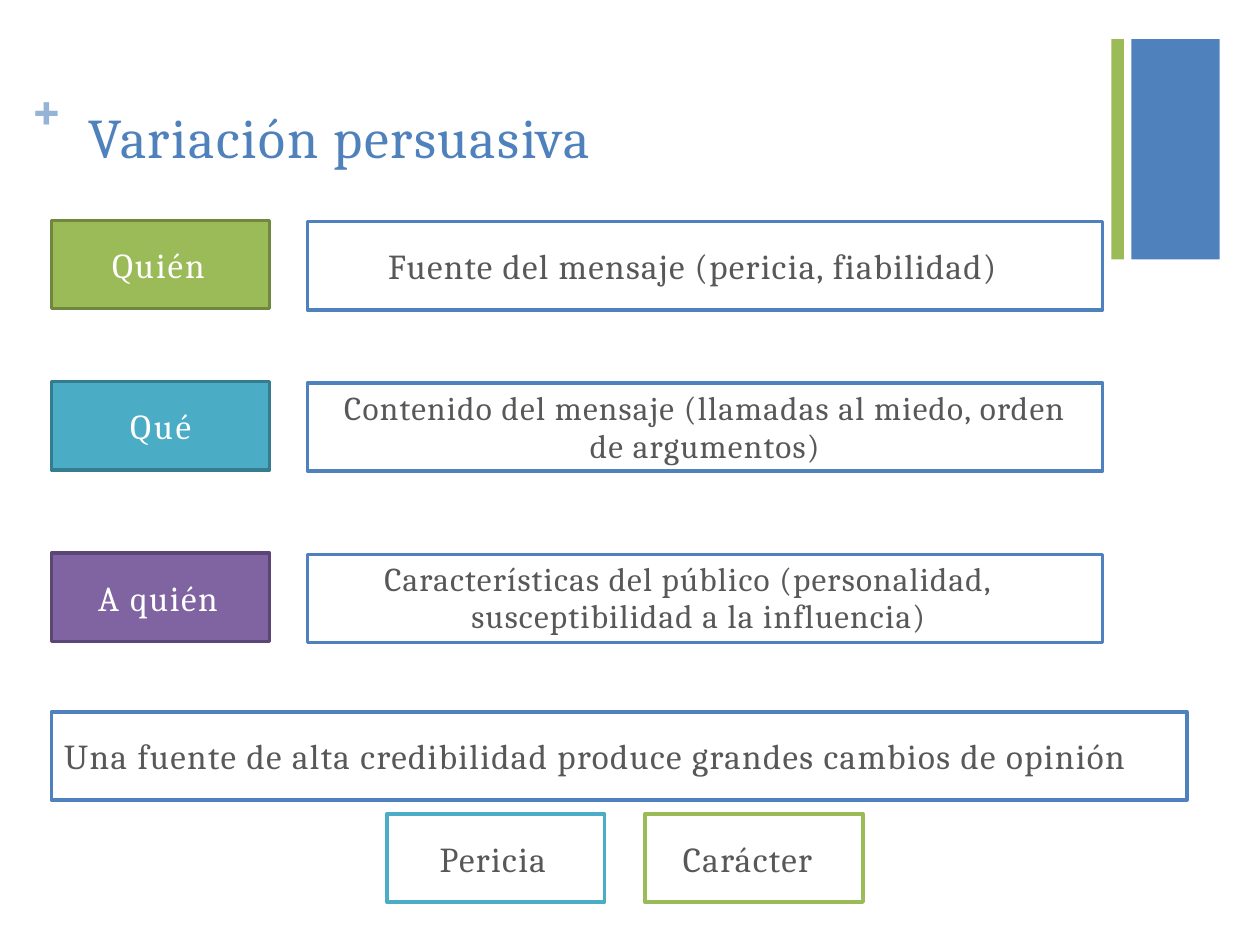
from pptx import Presentation
from pptx.dml.color import RGBColor
from pptx.enum.shapes import MSO_SHAPE
from pptx.enum.text import MSO_ANCHOR, MSO_AUTO_SIZE, PP_ALIGN
from pptx.util import Inches, Pt

RECT = MSO_SHAPE.RECTANGLE
TOP, MIDDLE = MSO_ANCHOR.TOP, MSO_ANCHOR.MIDDLE
LEFT, CENTER = PP_ALIGN.LEFT, PP_ALIGN.CENTER
FIT = MSO_AUTO_SIZE.NONE

FONT = "Cambria"
BLUE, GREEN, TEAL, VIOLET = "4F81BC", "9BBA58", "4AACC5", "8063A1"
PALE, GRAY, WHITE = "94B3D6", "585858", "FFFFFF"

TAG_X, TAG_W = 0.41, 1.73
NOTE_X, NOTE_W = 2.44, 6.31
BOX_H = 0.7

# top, tag, fill, line, tag indent, tag spacing, note, note style
ROWS = [
    (1.75, "Quién", GREEN, "70883E", 0.48, 1.1,
     "Fuente del mensaje (pericia, fiabilidad)",
     dict(indent=0.64, gap=0.75)),
    (3.03, "Qué", TEAL, "357C91", None, 1.6,
     "Contenido del mensaje (llamadas al miedo, orden\nde argumentos)",
     dict(size=19, gap=0.75, lead=21.8)),
    (4.39, "A quién", VIOLET, "5C4676", 0.37, 0.9,
     "Características del público (personalidad, "
     "susceptibilidad a la influencia)",
     dict(size=19, indent=1.3, first=-0.69, gap=0.7, lead=20.7)),
]


def color(code):
    return RGBColor.from_string(code)


def style(run, size, ink, gap, bold=False):
    font = run.font
    font.name, font.size, font.bold = FONT, Pt(size), bold
    font.color.rgb = color(ink)
    font._element.set("spc", str(round(gap * 100)))


def set_frame(frame, anchor):
    frame.word_wrap = True
    frame.auto_size = FIT
    frame.vertical_anchor = anchor
    frame.margin_left = frame.margin_right = 0
    frame.margin_top = frame.margin_bottom = 0


def set_indent(para, left, first=0):
    props = para._p.get_or_add_pPr()
    props.set("marL", str(Inches(left)))
    props.set("indent", str(Inches(first)))


def add_rect(slide, x, y, w, h, fill=None, line=None):
    box = slide.shapes.add_shape(RECT, Inches(x), Inches(y), Inches(w), Inches(h))
    box.shadow.inherit = False
    if fill:
        box.fill.solid()
        box.fill.fore_color.rgb = color(fill)
    else:
        box.fill.background()
    if line:
        box.line.color.rgb = color(line)
        box.line.width = Pt(2)
    else:
        box.line.fill.background()
    return box


def add_label(box, text, ink=GRAY, size=20, indent=None, first=0, gap=0.8, lead=None):
    """Write text in a box: centred, or left-aligned at an indent."""
    frame = box.text_frame
    set_frame(frame, MIDDLE)
    frame.text = text
    for para in frame.paragraphs:
        para.alignment = CENTER if indent is None else LEFT
        if indent is not None:
            set_indent(para, indent, first)
        if lead:
            para.line_spacing = Pt(lead)
        for run in para.runs:
            style(run, size, ink, gap)


def add_title(slide):
    title = slide.shapes.title
    title.left, title.top = Inches(0.2), Inches(0.5)
    title.width, title.height = Inches(4.72), Inches(0.63)
    frame = title.text_frame
    set_frame(frame, TOP)
    frame.margin_top = Inches(0.01)
    para = frame.paragraphs[0]
    para.alignment = LEFT
    set_indent(para, 0.04)
    plus, name = para.add_run(), para.add_run()
    plus.text, name.text = "+ ", "Variación persuasiva"
    style(plus, 54, PALE, 4, bold=True)
    plus.font._element.set("baseline", "31000")
    style(name, 32, BLUE, 0.89)


def main():
    prs = Presentation()
    prs.slide_width, prs.slide_height = Inches(10), Inches(7.5)
    slide = prs.slides.add_slide(prs.slide_layouts[5])

    # Corner bars and title
    add_rect(slide, 8.98, 0.31, 0.7, 1.75, BLUE)
    add_title(slide)
    add_rect(slide, 8.82, 0.31, 0.1, 1.75, GREEN)

    # Question tags with their notes
    for y, tag, fill, line, indent, gap, note, look in ROWS:
        box = add_rect(slide, TAG_X, y, TAG_W, BOX_H, fill, line)
        add_label(box, tag, WHITE, indent=indent, gap=gap)
        box = add_rect(slide, NOTE_X, y + 0.01, NOTE_W, BOX_H, line=BLUE)
        add_label(box, note, **look)

    # Conclusion and its two factors
    box = add_rect(slide, TAG_X, 5.65, 9.01, BOX_H, line=BLUE)
    add_label(box, "Una fuente de alta credibilidad produce grandes cambios de opinión",
              indent=0.1)
    for x, text, line, indent in [(3.07, "Pericia", TEAL, 0.42),
                                  (5.12, "Carácter", GREEN, 0.3)]:
        box = add_rect(slide, x, 6.46, TAG_W, BOX_H, line=line)
        add_label(box, text, indent=indent)

    prs.save("out.pptx")


if __name__ == "__main__":
    main()
